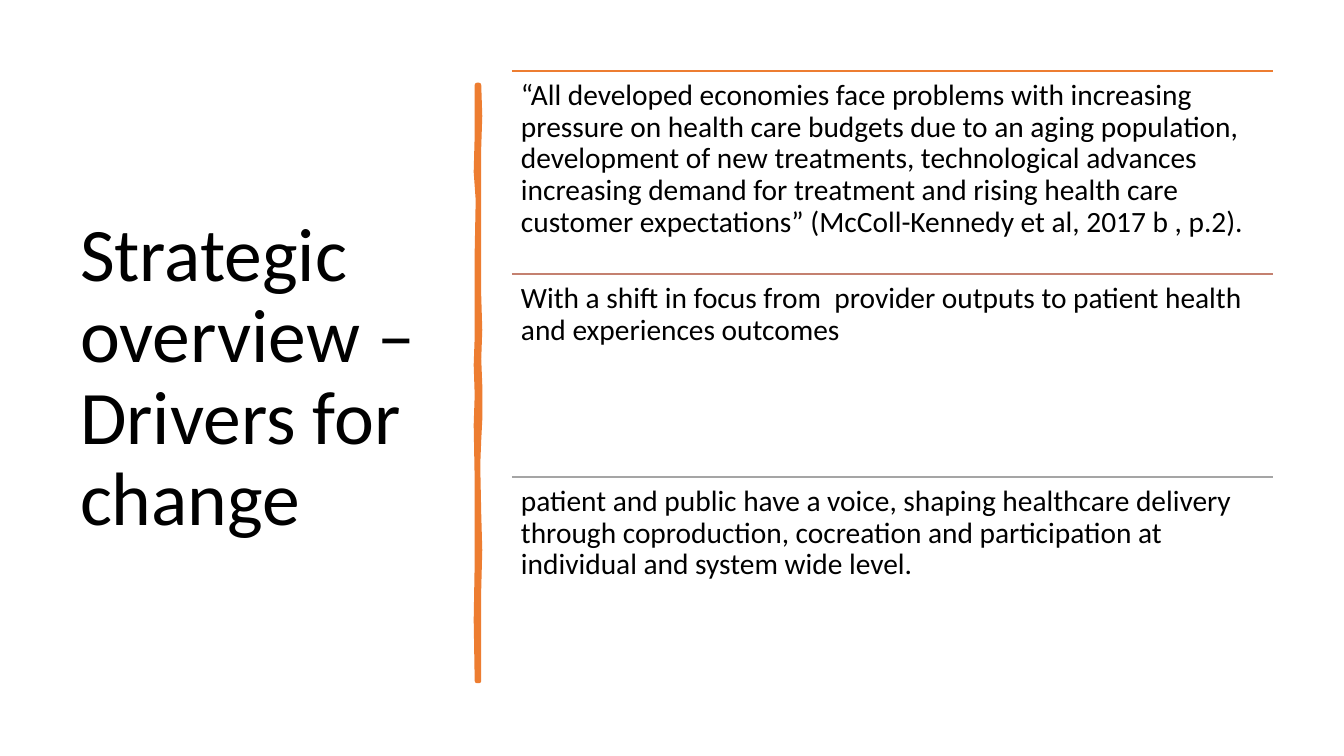
"""Build a slide with a title, a hand-drawn divider and a ruled list of drivers."""
from lxml import etree
from pptx import Presentation
from pptx.dml.color import RGBColor
from pptx.enum.shapes import MSO_CONNECTOR
from pptx.enum.text import MSO_ANCHOR, MSO_AUTO_SIZE, PP_ALIGN
from pptx.oxml.ns import qn
from pptx.util import Emu, Pt

EMU_PER_PX = 914400 / 100.8
STRAIGHT = MSO_CONNECTOR.STRAIGHT
TOP, MIDDLE = MSO_ANCHOR.TOP, MSO_ANCHOR.MIDDLE
LEFT = PP_ALIGN.LEFT
NO_AUTOFIT = MSO_AUTO_SIZE.NONE
FONT = "Calibri"
BLACK = RGBColor(0x00, 0x00, 0x00)
ORANGE = RGBColor(0xED, 0x7D, 0x31)
ROSE = RGBColor(0xC4, 0x81, 0x70)
GRAY = RGBColor(0xA5, 0xA5, 0xA5)

TITLE = "Strategic overview –\nDrivers for change"
DRIVERS = [
    ("“All developed economies face problems with increasing pressure on health care "
     "budgets due to an aging population, development of new treatments, technological "
     "advances increasing demand for treatment and rising health care customer "
     "expectations” (McColl-Kennedy et al, 2017 b , p.2).", ORANGE),
    ("With a shift in focus from  provider outputs to patient health and experiences "
     "outcomes", ROSE),
    ("patient and public have a voice, shaping healthcare delivery through coproduction, "
     "cocreation and participation at individual and system wide level.", GRAY),
]
RIGHT_EDGE = [(3, 0), (4, 31), (3, 62), (3, 211), (4, 245), (3, 274), (4, 300),
              (4, 335), (3, 355), (2, 380), (3, 429), (4, 465), (3, 504), (3, 596)]
LEFT_EDGE = [(1, 596), (0, 535), (1, 477), (1, 396), (0, 340), (1, 310), (0, 280),
             (1, 252), (1, 167), (2, 115), (0, 87), (1, 50), (1, 0)]


def px(length):
    """Turn pixels into EMU."""
    return Emu(round(length * EMU_PER_PX))


def write(frame, text, size, anchor=TOP, inset_x=9, inset_y=9):
    """Fill a text frame with one left-aligned paragraph, broken at newlines."""
    frame.word_wrap = True
    frame.auto_size = NO_AUTOFIT
    frame.vertical_anchor = anchor
    frame.margin_left = frame.margin_right = px(inset_x)
    frame.margin_top = frame.margin_bottom = px(inset_y)
    paragraph = frame.paragraphs[0]
    paragraph.alignment = LEFT
    paragraph.line_spacing = 0.9
    for index, line in enumerate(text.split("\n")):
        if index:
            paragraph.add_line_break()
        run = paragraph.add_run()
        run.text = line
        run.font.name = FONT
        run.font.size = Pt(size)
        run.font.color.rgb = BLACK


def place_title(slide, left, top, width, height):
    """Move the title placeholder into its box and write it."""
    title = slide.shapes.title
    title.left, title.top = px(left), px(top)
    title.width, title.height = px(width), px(height)
    write(title.text_frame, TITLE, 54, anchor=MIDDLE, inset_x=10, inset_y=5)


def draw_divider(slide, left, top):
    """Draw the wavering vertical bar from its two edges."""
    start, *rest = [(left + x, top + y) for x, y in RIGHT_EDGE + LEFT_EDGE]
    builder = slide.shapes.build_freeform(*start, scale=EMU_PER_PX)
    builder.add_line_segments(rest, close=True)
    divider = builder.convert_to_shape()
    divider.shadow.inherit = False
    divider.fill.solid()
    divider.fill.fore_color.rgb = ORANGE
    divider.line.color.rgb = ORANGE
    divider.line.width = Pt(3.25)
    etree.SubElement(divider.line._get_or_add_ln(), qn("a:round"))


def draw_rule(slide, left, top, width, color):
    """Draw a thin horizontal rule."""
    rule = slide.shapes.add_connector(
        STRAIGHT, px(left), px(top), px(left + width), px(top))
    rule.line.color.rgb = color
    rule.line.width = Pt(1)
    etree.SubElement(rule._element.spPr, qn("a:effectLst"))


def list_drivers(slide, left, top, width, height):
    """Stack the drivers in equal rows, each under its own rule."""
    row_height = height // len(DRIVERS)
    for index, (driver, color) in enumerate(DRIVERS):
        row_top = top + index * row_height
        draw_rule(slide, left, row_top, width, color)
        row = slide.shapes.add_textbox(
            px(left), px(row_top), px(width), px(row_height))
        write(row.text_frame, driver, 21)


def main():
    """Compose the slide and save it."""
    deck = Presentation()
    deck.slide_width, deck.slide_height = px(1344), px(756)
    slide = deck.slides.add_slide(deck.slide_layouts.get_by_name("Title Only"))
    place_title(slide, 70, 71, 377, 616)
    draw_divider(slide, 476, 85)
    list_drivers(slide, 512, 71, 761, 609)
    deck.save("out.pptx")


if __name__ == "__main__":
    main()
